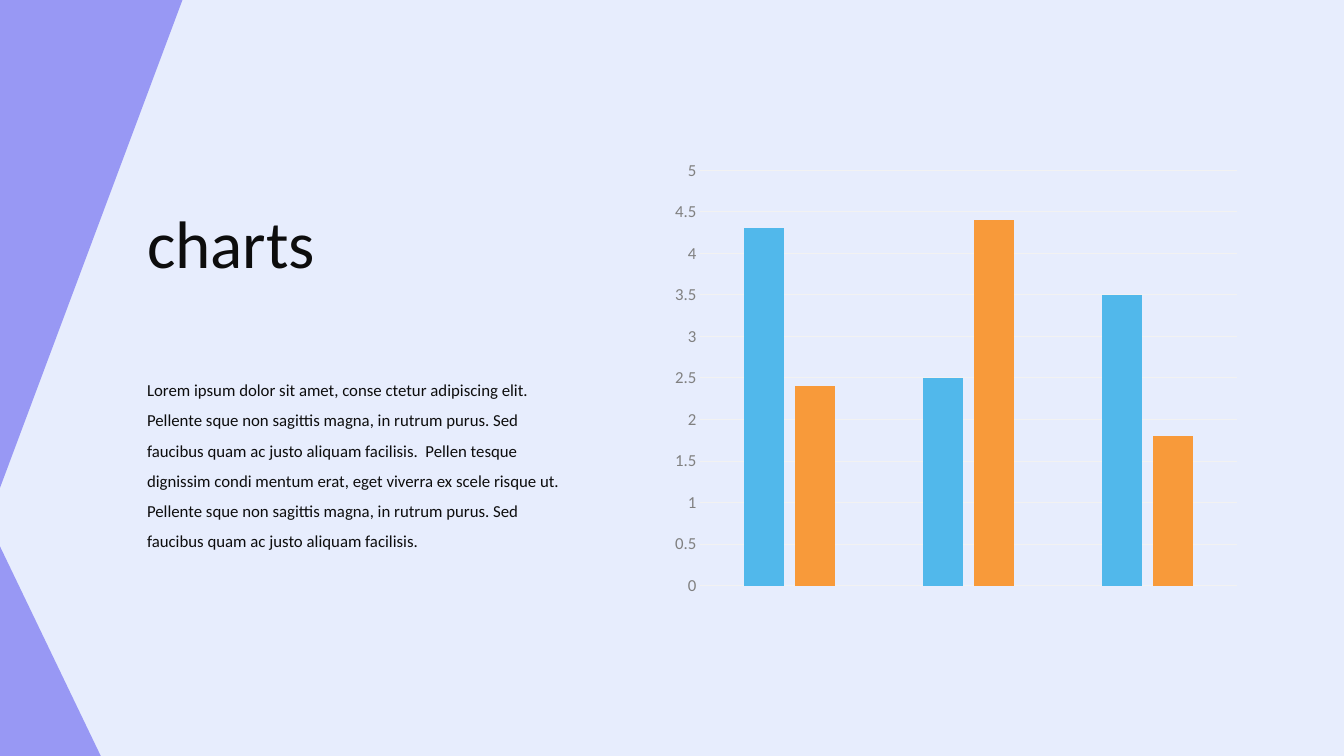
from pptx import Presentation
from pptx.chart.data import CategoryChartData
from pptx.dml.color import RGBColor
from pptx.enum.chart import XL_CHART_TYPE, XL_TICK_MARK
from pptx.enum.shapes import MSO_SHAPE
from pptx.util import Inches, Pt

COLUMNS = XL_CHART_TYPE.COLUMN_CLUSTERED
NO_TICKS = XL_TICK_MARK.NONE
RIGHT_TRIANGLE = MSO_SHAPE.RIGHT_TRIANGLE

SLIDE_WIDTH, SLIDE_HEIGHT = 13.33, 7.5
FONT = "Calibri"
BACKGROUND, LILAC, INK = "E7EDFD", "9898F4", "0D0D0D"
AXIS_GREY, GRID_GREY = "808080", "F2F2F2"

TITLE = "charts"
BODY = (
    "Lorem ipsum dolor sit amet, conse ctetur adipiscing elit. "
    "Pellente sque non sagittis magna, in rutrum purus. Sed faucibus quam "
    "ac justo aliquam facilisis.  Pellen tesque dignissim condi mentum erat, "
    "eget viverra ex scele risque ut. Pellente sque non sagittis magna, in "
    "rutrum purus. Sed faucibus quam ac justo aliquam facilisis."
)
CATEGORIES = ["1", "2", "3"]
SERIES = [
    ("Series 1", [4.3, 2.5, 3.5], "51B8EB"),
    ("Series 2", [2.4, 4.4, 1.8], "F89A3A"),
]


def paint(fill, color):
    fill.solid()
    fill.fore_color.rgb = RGBColor.from_string(color)


def style_font(font, size, color):
    font.name = FONT
    font.size = Pt(size)
    font.color.rgb = RGBColor.from_string(color)


def add_text(slide, box, text, size, color=INK, line_spacing=None):
    frame = slide.shapes.add_textbox(*map(Inches, box)).text_frame
    frame.word_wrap = True
    paragraph = frame.paragraphs[0]
    paragraph.line_spacing = line_spacing
    run = paragraph.add_run()
    run.text = text
    style_font(run.font, size, color)


def add_corner(slide, box, flipped=False):
    corner = slide.shapes.add_shape(RIGHT_TRIANGLE, *map(Inches, box))
    corner.shadow.inherit = False
    paint(corner.fill, LILAC)
    corner.line.fill.background()
    if flipped:
        corner._element.spPr.xfrm.set("flipV", "1")


def add_left_edge(slide, box):
    left, top, width, height = box
    upper_height, lower_width, lower_height = 4.84, 1, 2.08
    add_corner(slide, (left, top + height - lower_height, lower_width, lower_height))
    add_corner(slide, (left, top, width, upper_height), flipped=True)


def add_copy(slide, box):
    left, top, width, height = box
    body_offset = 1.67
    add_text(slide, (left, top, 3.29, 0.91), TITLE, size=48)
    add_text(slide, (left, top + body_offset, width, height - body_offset),
             BODY, size=12, line_spacing=1.5)


def add_columns(slide, box):
    data = CategoryChartData()
    data.categories = CATEGORIES
    for name, values, _ in SERIES:
        data.add_series(name, values)
    chart = slide.shapes.add_chart(COLUMNS, *map(Inches, box), data).chart
    chart.has_legend = False
    chart.has_title = False
    style_font(chart.font, 10, "000000")

    # Columns
    plot = chart.plots[0]
    plot.vary_by_categories = False
    plot.gap_width = 219
    plot.overlap = -27
    for series, (_, _, color) in zip(plot.series, SERIES):
        paint(series.format.fill, color)
        series.invert_if_negative = False

    # Axes
    chart.category_axis.visible = False
    value_axis = chart.value_axis
    value_axis.minimum_scale, value_axis.maximum_scale = 0, 5
    value_axis.major_unit = 0.5
    value_axis.major_tick_mark = NO_TICKS
    value_axis.minor_tick_mark = NO_TICKS
    value_axis.format.line.fill.background()
    style_font(value_axis.tick_labels.font, 12, AXIS_GREY)
    grid_line = value_axis.major_gridlines.format.line
    grid_line.width = Pt(0.75)
    paint(grid_line.fill, GRID_GREY)


def build_chart_slide(deck):
    slide = deck.slides.add_slide(deck.slide_layouts[6])
    paint(slide.background.fill, BACKGROUND)
    add_left_edge(slide, (0, 0, 1.81, SLIDE_HEIGHT))
    add_copy(slide, (1.36, 1.95, 4.42, 3.56))
    add_columns(slide, (6.58, 1.5, 5.8, 4.5))


def main():
    deck = Presentation()
    deck.slide_width = Inches(SLIDE_WIDTH)
    deck.slide_height = Inches(SLIDE_HEIGHT)
    build_chart_slide(deck)
    deck.save("out.pptx")


if __name__ == "__main__":
    main()
